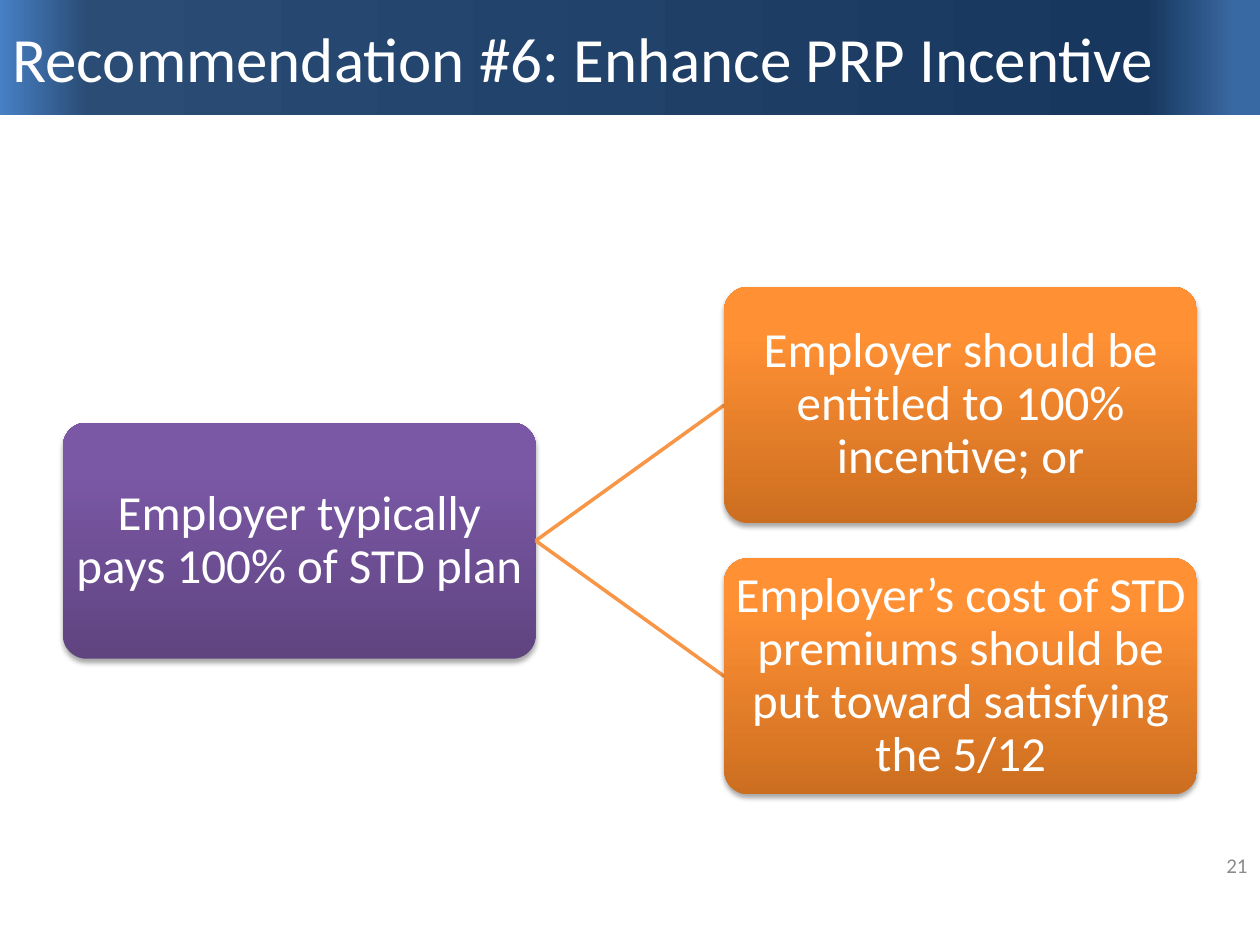
from lxml import etree
from pptx import Presentation
from pptx.dml.color import RGBColor
from pptx.enum.shapes import MSO_CONNECTOR, MSO_SHAPE
from pptx.enum.text import MSO_ANCHOR, PP_ALIGN
from pptx.oxml.ns import qn
from pptx.util import Cm, Pt

RECT, ROUND = MSO_SHAPE.RECTANGLE, MSO_SHAPE.ROUNDED_RECTANGLE
STRAIGHT, MIDDLE = MSO_CONNECTOR.STRAIGHT, MSO_ANCHOR.MIDDLE
LEFT, CENTER, RIGHT = PP_ALIGN.LEFT, PP_ALIGN.CENTER, PP_ALIGN.RIGHT

TITLE = "Recommendation #6: Enhance PRP Incentive"
CAUSE = "Employer typically pays 100% of STD plan"
OPTIONS = [
    "Employer should be entitled to 100% incentive; or",
    "Employer’s cost of STD premiums should be put toward satisfying the 5/12",
]
NUMBER = "21"

BLUE = [(2, "3969A2"), (9, "17375E"), (93, "2A4C75"), (100, "4780C5")]
PURPLE = [(0, "5F4480"), (80, "7B58A6"), (100, "7C57A8")]
ORANGE = [(0, "CC6E20"), (80, "FF9034"), (100, "FF9136")]
LINE, WHITE, GRAY = "F79646", "FFFFFF", "8C8C8C"

# Lengths in cm
WIDE, HIGH = 25.4, 19.05
BAR = 2.32
BOX_W, BOX_H = 9.53, 4.76
SIDE, GAP = 1.27, 0.71
MID = 10.9


def color(code):
    return RGBColor.from_string(code)


def node(parent, tag, **attrs):
    return etree.SubElement(parent, qn(tag), {k: str(v) for k, v in attrs.items()})


def shade(shape, stops, angle):
    """Fill with a linear gradient and drop the outline."""
    shape.line.fill.background()
    props = shape._element.spPr
    grad = node(props, "a:gradFill", rotWithShape=1)
    items = node(grad, "a:gsLst")
    for pos, code in stops:
        stop = node(items, "a:gs", pos=pos * 1000)
        node(stop, "a:srgbClr", val=code)
    node(grad, "a:lin", ang=angle * 60000, scaled=0)
    props.find(qn("a:ln")).addprevious(grad)


def drop(shape):
    """Add a soft shadow below the shape."""
    effects = shape._element.spPr.find(qn("a:effectLst"))
    shadow = node(effects, "a:outerShdw", blurRad=Pt(3.1), dist=Pt(1.8),
                  dir=90 * 60000, rotWithShape=0)
    tint = node(shadow, "a:srgbClr", val="000000")
    node(tint, "a:alpha", val=35000)


def write(shape, text, size, code, align, pad, space=1.0):
    frame = shape.text_frame
    frame.word_wrap = True
    frame.vertical_anchor = MIDDLE
    frame.margin_left = frame.margin_right = Cm(pad)
    frame.margin_top = frame.margin_bottom = Cm(pad / 2)
    para = frame.paragraphs[0]
    para.alignment = align
    para.line_spacing = space
    run = para.add_run()
    run.text = text
    run.font.name = "Calibri"
    run.font.size = Pt(size)
    run.font.color.rgb = color(code)


def add_bar(shapes):
    bar = shapes.add_shape(RECT, 0, 0, Cm(WIDE), Cm(BAR))
    bar.shadow.inherit = False
    shade(bar, BLUE, 180)
    write(bar, TITLE, 36, WHITE, LEFT, 0.25)


def add_box(shapes, left, mid, text, stops):
    box = shapes.add_shape(ROUND, Cm(left), Cm(mid - BOX_H / 2), Cm(BOX_W), Cm(BOX_H))
    box.adjustments[0] = 0.1
    box.shadow.inherit = False
    shade(box, stops, 270)
    drop(box)
    write(box, text, 28, WHITE, CENTER, 0.04, 0.9)


def add_link(shapes, start, end):
    link = shapes.add_connector(STRAIGHT, *map(Cm, start + end))
    link.line.color.rgb = color(LINE)
    link.line.width = Pt(2)
    node(link._element.spPr, "a:effectLst")


def main():
    deck = Presentation()
    deck.slide_width, deck.slide_height = Cm(WIDE), Cm(HIGH)
    shapes = deck.slides.add_slide(deck.slide_layouts[6]).shapes

    add_bar(shapes)
    add_box(shapes, SIDE, MID, CAUSE, PURPLE)
    right = WIDE - SIDE - BOX_W
    for i, text in enumerate(OPTIONS):
        mid = MID + (i - (len(OPTIONS) - 1) / 2) * (BOX_H + GAP)
        add_link(shapes, (SIDE + BOX_W, MID), (right, mid))
        add_box(shapes, right, mid, text, ORANGE)

    page = shapes.add_textbox(Cm(19.47), Cm(16.93), Cm(5.93), Cm(1.01))
    write(page, NUMBER, 12, GRAY, RIGHT, 0.25)
    deck.save("out.pptx")


if __name__ == "__main__":
    main()
